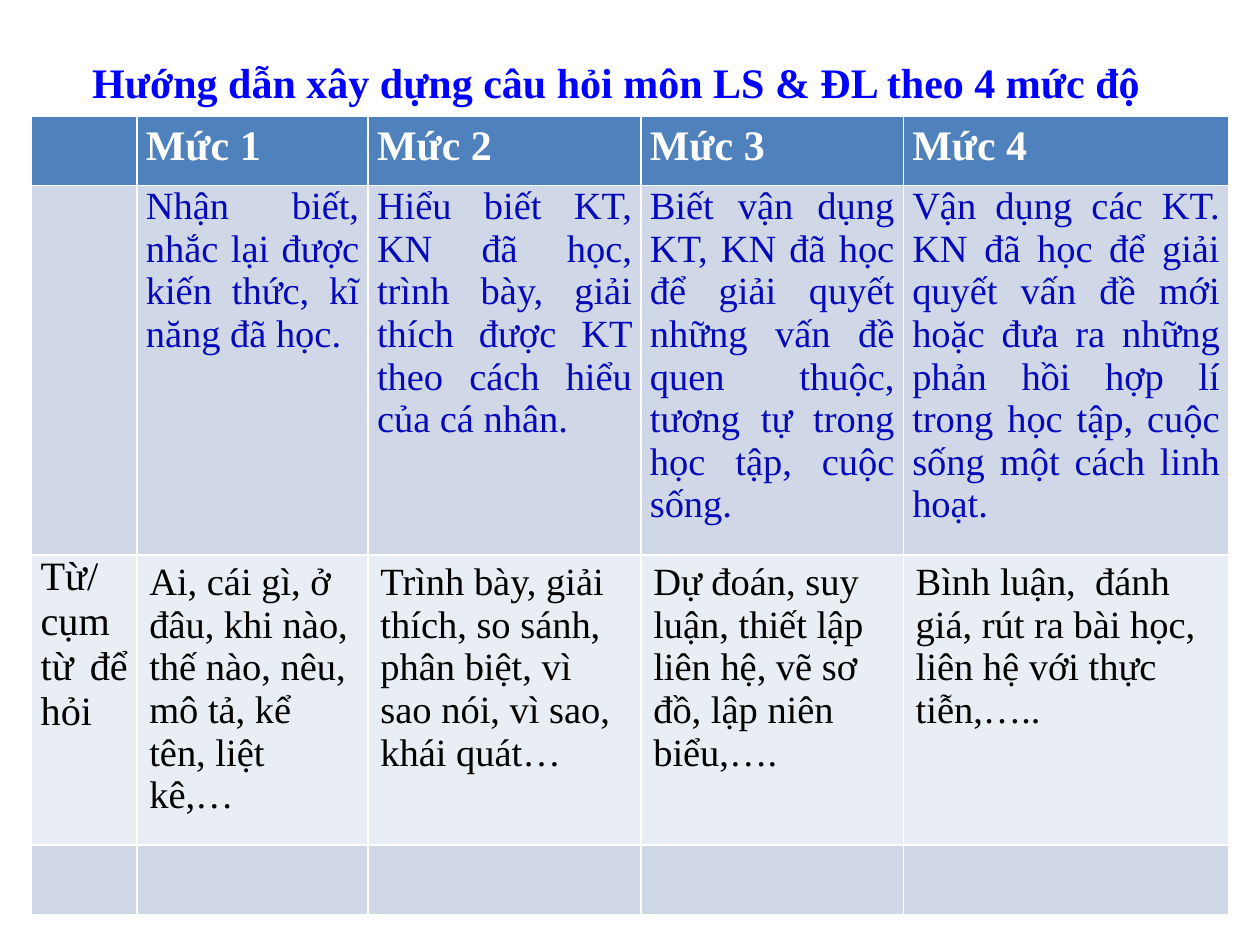
"""Build a slide with a table of question levels for History and Geography."""
from pptx import Presentation
from pptx.dml.color import RGBColor
from pptx.enum.text import PP_ALIGN
from pptx.util import Cm, Pt

COLORS = {
    "title": "0000FF",
    "header": "4F81BD",
    "header_text": "FFFFFF",
    "band_dark": "D0D8E8",
    "band_light": "E9EDF4",
    "description": "0509BB",
    "body": "000000",
}


def write_text(frame, text, size, color, bold=False, align=PP_ALIGN.LEFT,
               line_spacing=1.0, margins=(0.25, 0.13)):
    frame.word_wrap = True
    side, top = margins
    frame.margin_left = frame.margin_right = Cm(side)
    frame.margin_top = frame.margin_bottom = Cm(top)
    para = frame.paragraphs[0]
    para.alignment = align
    para.line_spacing = line_spacing
    span = para.add_run()
    span.text = text
    span.font.name = "Times New Roman"
    span.font.size = Pt(size)
    span.font.bold = bold
    span.font.color.rgb = RGBColor.from_string(COLORS[color])


deck = Presentation()
deck.slide_width, deck.slide_height = Cm(25.4), Cm(19.05)
page = deck.slides.add_slide(deck.slide_layouts[6])

title_box = page.shapes.add_textbox(Cm(0.84), Cm(0.64), Cm(24.13), Cm(16.26))
write_text(title_box.text_frame, "Hướng dẫn xây dựng câu hỏi môn LS & ĐL theo 4 mức độ",
           size=24, color="title", bold=True, margins=(1.02, 0.53))

column_widths = [2.12, 4.66, 5.5, 5.29, 6.56]
row_heights = [1.4, 6.89, 5.4, 1.41]
row_fills = ["header", "band_dark", "band_light", "band_dark"]
rows = [
    ["", "Mức 1", "Mức 2", "Mức 3", "Mức 4"],
    [
        "",
        "Nhận biết, nhắc lại được kiến thức, kĩ năng đã học.",
        "Hiểu biết KT, KN đã học, trình bày, giải thích được KT theo cách hiểu của cá nhân.",
        "Biết vận dụng KT, KN đã học để giải quyết những vấn đề quen thuộc, "
        "tương tự trong học tập, cuộc sống.",
        "Vận dụng các KT. KN đã học để giải quyết vấn đề mới hoặc đưa ra những "
        "phản hồi hợp lí trong học tập, cuộc sống một cách linh hoạt.",
    ],
    [
        "Từ/ cụm từ để hỏi",
        "Ai, cái gì, ở đâu, khi nào, thế nào, nêu, mô tả, kể tên, liệt kê,…",
        "Trình bày, giải thích, so sánh, phân biệt, vì sao nói, vì sao, khái quát…",
        "Dự đoán, suy luận, thiết lập liên hệ, vẽ sơ đồ, lập niên biểu,….",
        "Bình luận,  đánh giá, rút ra bài học, liên hệ với thực tiễn,…..",
    ],
    [""] * 5,
]

justified = {"align": PP_ALIGN.JUSTIFY, "margins": (0.18, 0)}
header_format = {"size": 24, "color": "header_text", "bold": True, "line_spacing": 1.15, **justified}
description_format = {"size": 22, "color": "description", **justified}
label_format = {"size": 23, "color": "body", **justified}
keyword_format = {"size": 22, "color": "body"}
row_formats = [header_format, description_format, keyword_format, keyword_format]

table = page.shapes.add_table(len(rows), len(column_widths), Cm(0.64), Cm(2.34),
                              Cm(sum(column_widths)), Cm(sum(row_heights))).table
for column, width in zip(table.columns, column_widths):
    column.width = Cm(width)
for row, height in zip(table.rows, row_heights):
    row.height = Cm(height)

for row_index, texts in enumerate(rows):
    for column_index, text in enumerate(texts):
        cell = table.cell(row_index, column_index)
        cell.fill.solid()
        cell.fill.fore_color.rgb = RGBColor.from_string(COLORS[row_fills[row_index]])
        if text:
            cell_format = label_format if column_index == 0 else row_formats[row_index]
            side, top = cell_format.get("margins", (0.25, 0.13))
            cell.margin_left = cell.margin_right = Cm(side)
            cell.margin_top = cell.margin_bottom = Cm(top)
            write_text(cell.text_frame, text, **cell_format)

deck.save("out.pptx")
